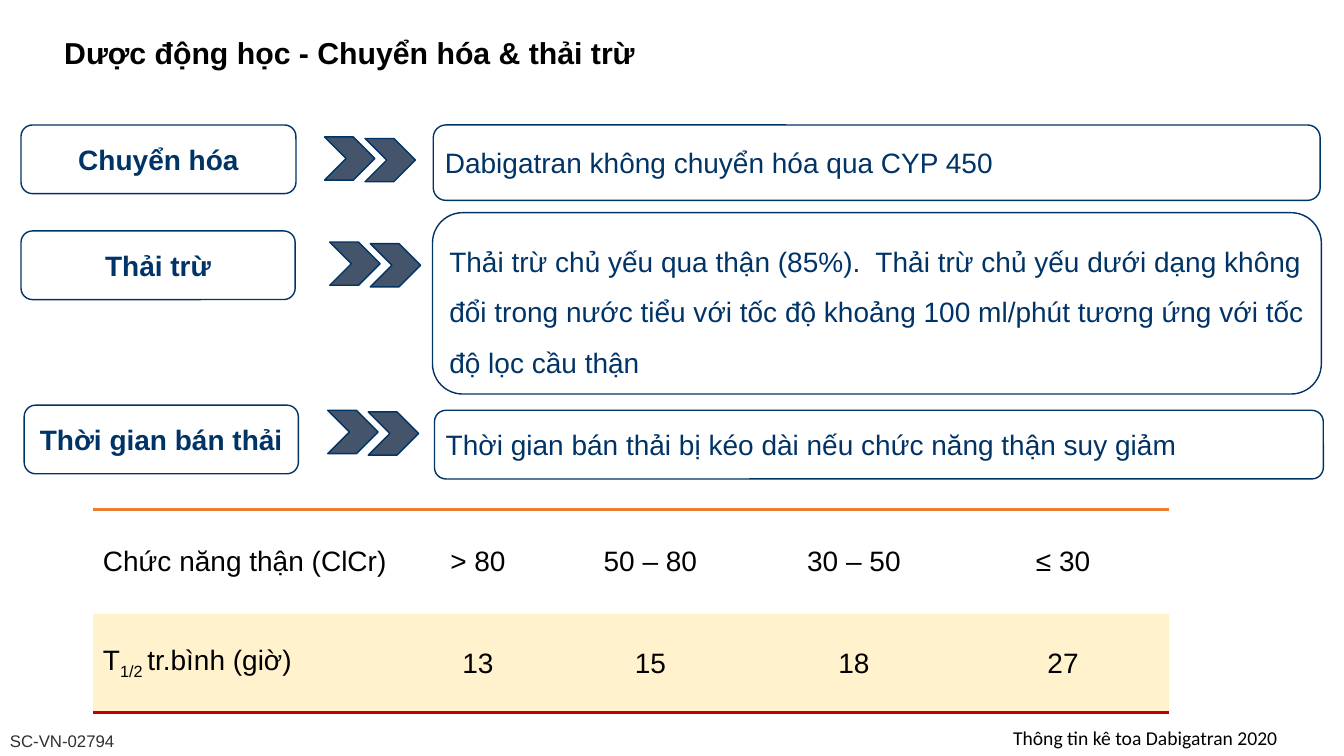
from dataclasses import dataclass

from lxml.etree import SubElement
from pptx import Presentation
from pptx.dml.color import RGBColor
from pptx.enum.shapes import MSO_SHAPE
from pptx.enum.text import MSO_ANCHOR, PP_ALIGN
from pptx.oxml import parse_xml
from pptx.oxml.ns import nsdecls, qn
from pptx.util import Cm, Pt

COLORS = {
    "white": "FFFFFF",
    "black": "000000",
    "gray": "303030",
    "navy": "003366",
    "slate": "44546A",
    "orange": "ED7D31",
    "red": "C00000",
    "cream": "FFF2CC",
}
NO_STYLE = "{2D5ABB26-0587-4C30-8999-92F81FD0307C}"
CHEVRON_W, CHEVRON_H = 1.27, 1.09
CHEVRON_STEP = (1.02, 0.04)


@dataclass
class Box:
    x: float
    y: float
    w: float
    h: float
    text: str


@dataclass
class Topic:
    label: Box
    chevrons: tuple[float, float]
    detail: Box
    spacing: float = 1.0


@dataclass
class TableRow:
    height: float
    fill: str
    edge: str
    edge_color: str
    cells: list[str]


TOPICS = [
    Topic(
        Box(0.53, 3.15, 6.93, 1.73, "Chuyển hóa"),
        (8.18, 3.45),
        Box(10.92, 3.15, 22.35, 1.9, "Dabigatran không chuyển hóa qua CYP 450"),
    ),
    Topic(
        Box(0.53, 5.82, 6.91, 1.73, "Thải trừ"),
        (8.31, 6.1),
        Box(10.9, 5.36, 22.4, 4.57,
            "Thải trừ chủ yếu qua thận (85%).  Thải trừ chủ yếu dưới dạng không "
            "đổi trong nước tiểu với tốc độ khoảng 100 ml/phút tương ứng với "
            "tốc độ lọc cầu thận"),
        1.5,
    ),
    Topic(
        Box(0.61, 10.21, 6.91, 1.73, "Thời gian bán thải"),
        (8.26, 10.34),
        Box(10.95, 10.34, 22.4, 1.73,
            "Thời gian bán thải bị kéo dài nếu chức năng thận suy giảm"),
    ),
]
COL_WIDTHS = [7.9, 3.61, 5.08, 5.18, 5.36]
TABLE_ROWS = [
    TableRow(2.64, "white", "lnT", "orange",
             ["Chức năng thận (ClCr)", "> 80", "50 – 80", "30 – 50", "≤ 30"]),
    TableRow(2.49, "cream", "lnB", "red",
             ["T_1/2 _tr.bình (giờ)", "13", "15", "18", "27"]),
]


def rgb(name: str) -> RGBColor:
    return RGBColor.from_string(COLORS[name])


def write(tf, text: str, size: float = 20, color: str = "black", bold: bool = False,
          font: str = "Arial", align=PP_ALIGN.LEFT, spacing: float = 1.0):
    p = tf.paragraphs[0]
    p.alignment = align
    p.line_spacing = spacing
    for i, part in enumerate(text.split("_")):
        r = p.add_run()
        r.text = part
        r.font.size = Pt(size)
        r.font.name = font
        r.font.bold = bold
        r.font.color.rgb = rgb(color)
        if i % 2:
            r.font._element.set("baseline", "-25000")
    return p


def set_margins(tf, margin: float) -> None:
    tf.margin_left = tf.margin_right = tf.margin_top = tf.margin_bottom = Cm(margin)


def add_text(slide, box: Box, margin: float | None = None,
             anchor=MSO_ANCHOR.TOP, **fmt) -> None:
    tf = slide.shapes.add_textbox(Cm(box.x), Cm(box.y), Cm(box.w), Cm(box.h)).text_frame
    tf.word_wrap = True
    tf.vertical_anchor = anchor
    if margin is not None:
        set_margins(tf, margin)
    write(tf, box.text, **fmt)


def add_shape(slide, kind, x: float, y: float, w: float, h: float, fill: str):
    sp = slide.shapes.add_shape(kind, Cm(x), Cm(y), Cm(w), Cm(h))
    sp.shadow.inherit = False
    sp.fill.solid()
    sp.fill.fore_color.rgb = rgb(fill)
    sp.line.color.rgb = rgb("navy")
    sp.line.width = Pt(1)
    return sp


def add_box(slide, box: Box, **fmt) -> None:
    sp = add_shape(slide, MSO_SHAPE.ROUNDED_RECTANGLE, box.x, box.y, box.w, box.h, "white")
    tf = sp.text_frame
    tf.word_wrap = True
    tf.vertical_anchor = MSO_ANCHOR.MIDDLE
    set_margins(tf, 0.2)
    write(tf, box.text, color="navy", **fmt)


def add_topic(slide, topic: Topic) -> None:
    add_box(slide, topic.label, bold=True, align=PP_ALIGN.CENTER)
    add_box(slide, topic.detail, spacing=topic.spacing)
    x, y = topic.chevrons
    dx, dy = CHEVRON_STEP
    for i in range(2):
        add_shape(slide, MSO_SHAPE.CHEVRON, x + i * dx, y + i * dy,
                  CHEVRON_W, CHEVRON_H, "slate")


def set_border(cell, edge: str, color: str) -> None:
    ln = parse_xml(f'<a:{edge} {nsdecls("a")} w="{Pt(2.25)}"/>')
    fill = SubElement(ln, qn("a:solidFill"))
    SubElement(fill, qn("a:srgbClr")).set("val", COLORS[color])
    cell._tc.get_or_add_tcPr().insert(0, ln)


def add_half_life_table(slide, x: float, y: float) -> None:
    frame = slide.shapes.add_table(
        len(TABLE_ROWS), len(COL_WIDTHS), Cm(x), Cm(y),
        Cm(sum(COL_WIDTHS)), Cm(sum(row.height for row in TABLE_ROWS)))
    table = frame.table
    table.first_row = table.horz_banding = False
    table._tbl.tblPr.find(qn("a:tableStyleId")).text = NO_STYLE
    for col, width in zip(table.columns, COL_WIDTHS):
        col.width = Cm(width)
    for i, row in enumerate(TABLE_ROWS):
        table.rows[i].height = Cm(row.height)
        for j, text in enumerate(row.cells):
            cell = table.cell(i, j)
            cell.vertical_anchor = MSO_ANCHOR.MIDDLE
            cell.fill.solid()
            cell.fill.fore_color.rgb = rgb(row.fill)
            set_border(cell, row.edge, row.edge_color)
            p = write(cell.text_frame, text, align=PP_ALIGN.CENTER if j else PP_ALIGN.LEFT)
            if j:
                pPr = p._p.get_or_add_pPr()
                pPr.set("marL", str(Cm(0.74)))
                pPr.set("indent", str(-Cm(0.74)))


def main() -> None:
    prs = Presentation()
    prs.slide_width, prs.slide_height = Cm(33.87), Cm(19.05)
    slide = prs.slides.add_slide(prs.slide_layouts[6])
    add_text(slide, Box(0, 18.29, 16.94, 0.76, "SC-VN-02794"), size=12, color="gray")
    add_text(slide, Box(1.37, 0.86, 23.37, 1.02, "Dược động học - Chuyển hóa & thải trừ"),
             anchor=MSO_ANCHOR.MIDDLE, size=21.6, bold=True, spacing=0.9)
    add_text(slide, Box(25.53, 18.29, 7.82, 0.61, "Thông tin kê toa Dabigatran 2020"),
             margin=0, size=14, font="Calibri")
    for topic in TOPICS:
        add_topic(slide, topic)
    add_half_life_table(slide, 2.34, 12.83)
    prs.save("out.pptx")


if __name__ == "__main__":
    main()
